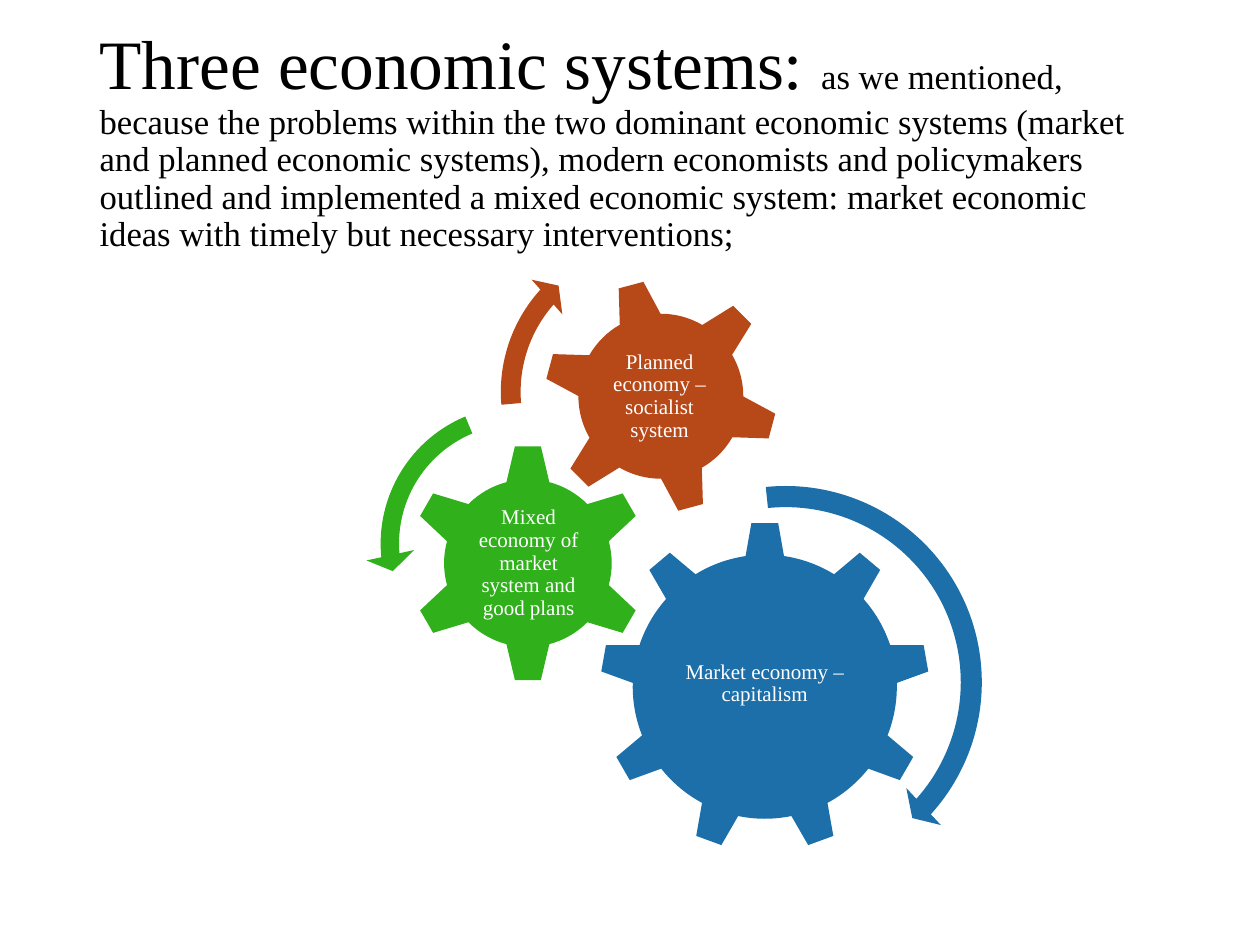
from pptx import Presentation
from pptx.dml.color import RGBColor
from pptx.enum.shapes import MSO_SHAPE as Shape
from pptx.enum.text import MSO_ANCHOR as Anchor, MSO_AUTO_SIZE as Fit, PP_ALIGN as Align
from pptx.util import Inches, Pt

BLUE, GREEN, RUST = "1D6FA9", "30B01B", "B74919"


def write(shape, *runs, color="000000", align=Align.LEFT, inset=None):
    """Fill a shape with one paragraph of (text, size) runs."""
    frame = shape.text_frame
    frame.word_wrap = True
    frame.auto_size = Fit.NONE
    frame.vertical_anchor = Anchor.MIDDLE
    if inset is not None:
        frame.margin_left = frame.margin_right = Inches(inset)
        frame.margin_top = frame.margin_bottom = Inches(inset)
    para = frame.paragraphs[0]
    para.alignment = align
    para.line_spacing = 0.9
    for text, size in runs:
        run = para.add_run()
        run.text = text
        run.font.name = "Times New Roman"
        run.font.size = Pt(size)
        run.font.color.rgb = RGBColor.from_string(color)


def draw(kind, left, top, size, color):
    """Add a square, filled shape without outline or shadow."""
    shape = slide.shapes.add_shape(
        kind, Inches(left), Inches(top), Inches(size), Inches(size))
    shape.shadow.inherit = False
    shape.fill.solid()
    shape.fill.fore_color.rgb = RGBColor.from_string(color)
    shape.line.fill.background()
    return shape


deck = Presentation()
deck.slide_width, deck.slide_height = Inches(10), Inches(7.5)
slide = deck.slides.add_slide(deck.slide_layouts[5])

title = slide.shapes.title
title.left, title.top = Inches(0.69), Inches(0.4)
title.width, title.height = Inches(8.62), Inches(1.45)
write(title, ("Three economic systems: ", 39.6),
      ("as we mentioned, because the problems within the two dominant economic "
       "systems (market and planned economic systems), modern economists and "
       "policymakers outlined and implemented a mixed economic system: market "
       "economic ideas with timely but necessary interventions;", 19.8))

# kind, left, top, size, turn, color, label, label box
gears = [
    (Shape.GEAR_9, 4.76, 4.14, 2.62, 0, BLUE,
     "Market economy – capitalism", (5.29, 4.75, 1.56, 1.35)),
    (Shape.GEAR_6, 3.24, 3.52, 1.9, 0, GREEN,
     "Mixed economy of market system and good plans", (3.72, 4, 0.95, 0.94)),
    (Shape.GEAR_6, 4.31, 2.21, 1.87, 345, RUST,
     "Planned economy – socialist system", (4.71, 2.62, 1.05, 1.05)),
]
for kind, left, top, size, turn, color, label, box in gears:
    draw(kind, left, top, size, color).rotation = turn
    text = slide.shapes.add_textbox(*map(Inches, box))
    write(text, (label, 12), color="FFFFFF", align=Align.CENTER, inset=0.02)

# kind, left, top, size, color, adjustments
arrows = [
    (Shape.CIRCULAR_ARROW, 4.56, 3.74, 3.35, BLUE,
     (0.05, 2.99, 25.2, 158.53, 0.06)),
    (Shape.LEFT_CIRCULAR_ARROW, 2.9, 3.1, 2.43, GREEN,
     (0.06, 4.3, 104.89, 148.38, 0.08)),
    (Shape.CIRCULAR_ARROW, 3.87, 1.8, 2.62, RUST,
     (0.06, 3.94, 133.14, 105.08, 0.07)),
]
for kind, left, top, size, color, bends in arrows:
    arrow = draw(kind, left, top, size, color)
    for i, bend in enumerate(bends):
        arrow.adjustments[i] = bend

deck.save("out.pptx")
